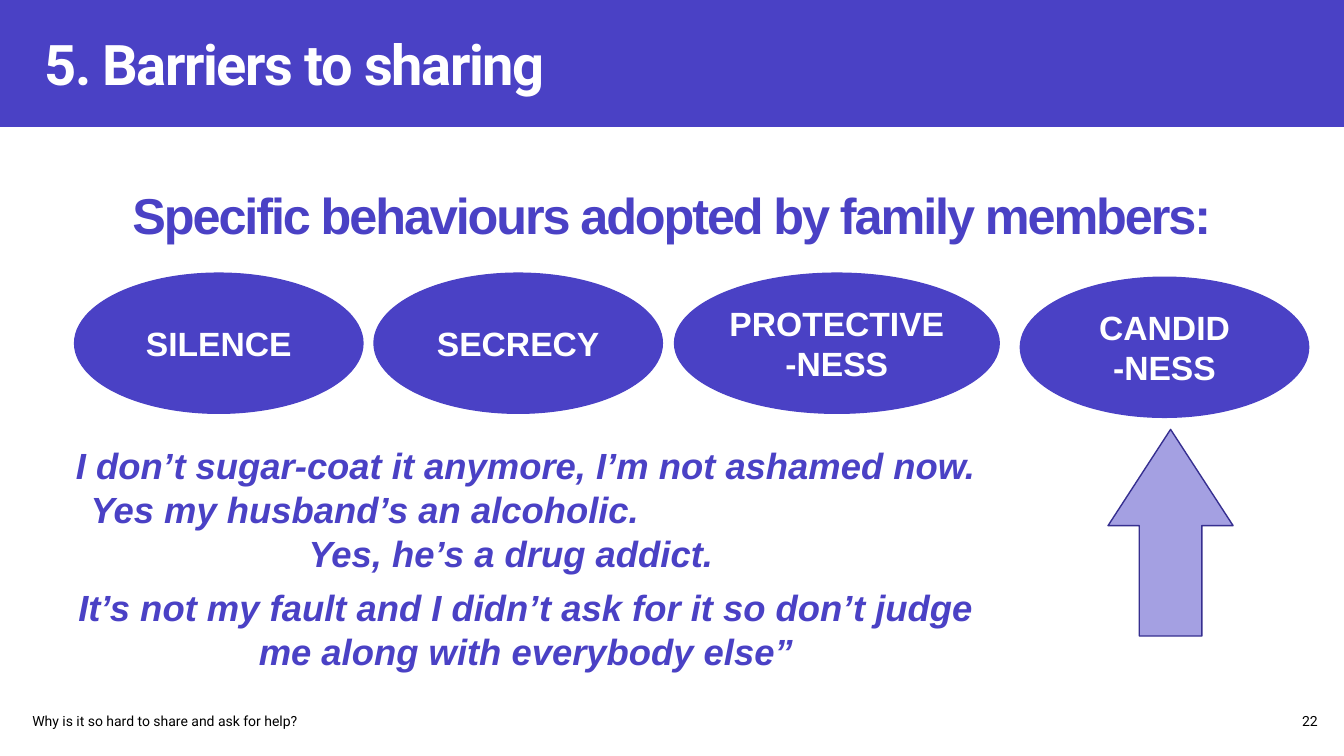
from pptx import Presentation
from pptx.dml.color import RGBColor
from pptx.enum.shapes import MSO_SHAPE
from pptx.enum.text import MSO_ANCHOR, MSO_AUTO_SIZE, PP_ALIGN
from pptx.oxml import parse_xml
from pptx.oxml.ns import nsdecls
from pptx.util import Inches, Pt

COLORS = {
    "purple": "4A41C5",
    "lilac": "A4A0E2",
    "outline": "362F90",
    "white": "FFFFFF",
    "black": "000000",
}


def write(shape, lines, font, size, color, bold=False, italic=False,
          align=PP_ALIGN.LEFT, anchor=MSO_ANCHOR.MIDDLE, wrap=True, spacing=0):
    frame = shape.text_frame
    frame.text = "\n".join(lines)
    frame.word_wrap = wrap
    frame.auto_size = MSO_AUTO_SIZE.NONE
    frame.vertical_anchor = anchor
    frame.margin_left = frame.margin_right = Inches(0.05)
    frame.margin_top = frame.margin_bottom = Inches(0.05)
    for paragraph in frame.paragraphs:
        properties = paragraph._p.get_or_add_pPr()
        properties.set("marL", "0")
        properties.set("indent", "0")
        paragraph.alignment = align
        paragraph.space_before = Pt(0)
        properties.append(parse_xml(f"<a:buNone {nsdecls('a')}/>"))
        paragraph.font.name = font
        paragraph.font.size = Pt(size)
        paragraph.font.bold = bold
        paragraph.font.italic = italic
        paragraph.font.color.rgb = RGBColor.from_string(COLORS[color])
        if spacing:
            paragraph.runs[0]._r.get_or_add_rPr().set("spc", str(spacing))
    return frame.paragraphs


def paint(shape, fill, outline):
    shape.shadow.inherit = False
    shape.fill.solid()
    shape.fill.fore_color.rgb = RGBColor.from_string(COLORS[fill])
    shape.line.color.rgb = RGBColor.from_string(COLORS[outline])
    shape.line.width = Pt(1)


prs = Presentation()
prs.slide_width = Inches(13.33)
prs.slide_height = Inches(7.5)
slide = prs.slides.add_slide(prs.slide_layouts[1])
shapes = slide.shapes

band = shapes.add_shape(MSO_SHAPE.RECTANGLE, 0, 0, prs.slide_width, Inches(1.26))
paint(band, "purple", "purple")
band.line.fill.background()
shapes._spTree.insert(2, band._element)

title = shapes.title
title.left, title.top, title.width, title.height = map(Inches, (0.39, 0.21, 12.49, 0.83))
write(title, ["5. Barriers to sharing"], "Roboto", 40, "white", bold=True, spacing=-100)

heading = slide.placeholders[1]
heading.left, heading.top, heading.width, heading.height = map(Inches, (0.66, 1.72, 12.01, 5.24))
heading_lines = write(heading, ["Specific behaviours adopted by family members:"], "Arial", 36,
                      "purple", bold=True, align=PP_ALIGN.CENTER,
                      anchor=MSO_ANCHOR.TOP, spacing=-150)
heading_lines[0].line_spacing = 1.1

behaviours = [
    (["SILENCE"], 0.74, 2.71, 2.86),
    (["SECRECY"], 3.71, 2.71, 2.86),
    (["PROTECTIVE", "-NESS"], 6.69, 2.71, 3.22),
    (["CANDID", "-NESS"], 10.12, 2.75, 2.86),
]
for words, left, top, width in behaviours:
    behaviour = shapes.add_shape(MSO_SHAPE.OVAL, Inches(left), Inches(top),
                                 Inches(width), Inches(1.39))
    paint(behaviour, "purple", "purple")
    write(behaviour, words, "Arial", 24, "white", bold=True, align=PP_ALIGN.CENTER)

quote = shapes.add_textbox(Inches(0.61), Inches(4.35), Inches(9.22), Inches(2.4))
quote_lines = write(quote, [
    "I don’t sugar-coat it anymore, I’m not ashamed now.",
    "Yes my husband’s an alcoholic.",
    "Yes, he’s a drug addict.",
    "It’s not my fault and I didn’t ask for it so don’t judge me along with everybody else”",
], "Arial", 26, "purple", bold=True, italic=True, align=PP_ALIGN.CENTER, anchor=MSO_ANCHOR.TOP)
for line, indent in zip(quote_lines[1:3], (0.24, 2.4)):
    line.alignment = PP_ALIGN.LEFT
    line._p.get_or_add_pPr().set("marL", str(Inches(indent)))
quote_lines[3].space_before = Pt(8)

candidness_arrow = shapes.add_shape(MSO_SHAPE.UP_ARROW, Inches(10.99), Inches(4.26),
                                    Inches(1.24), Inches(2.05))
candidness_arrow.adjustments[0] = 0.5
candidness_arrow.adjustments[1] = 0.77
paint(candidness_arrow, "lilac", "outline")

footer = shapes.add_textbox(Inches(0.27), Inches(7.02), Inches(5.19), Inches(0.27))
write(footer, ["Why is it so hard to share and ask for help?"], "Roboto", 10, "black")

page_number = shapes.add_textbox(Inches(12.85), Inches(7.02), Inches(0.27), Inches(0.27))
write(page_number, ["22"], "Roboto", 10, "black", align=PP_ALIGN.RIGHT, wrap=False)

prs.save("out.pptx")
